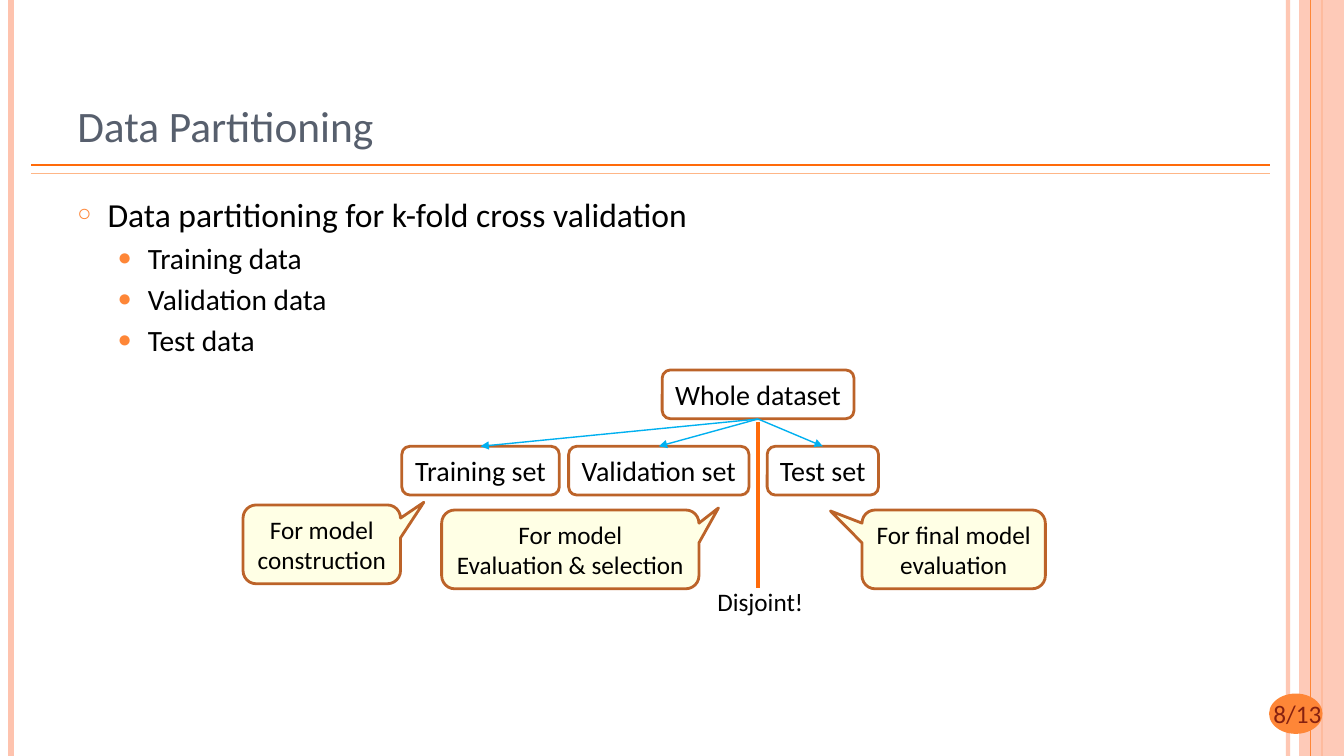
from lxml.etree import SubElement
from pptx import Presentation
from pptx.dml.color import RGBColor
from pptx.enum.shapes import MSO_CONNECTOR, MSO_SHAPE as Shape
from pptx.enum.text import MSO_ANCHOR as Anchor, MSO_AUTO_SIZE as AutoSize, PP_ALIGN as Align
from pptx.oxml.ns import qn
from pptx.util import Pt

FONT = "Calibri"
BLACK = RGBColor(0x00, 0x00, 0x00)
SLATE = RGBColor(0x57, 0x5F, 0x6D)
PEACH = RGBColor(0xFE, 0xC3, 0xAE)
ORANGE = RGBColor(0xFE, 0x86, 0x37)
DEEP_ORANGE = RGBColor(0xFF, 0x6B, 0x0A)
LIGHT_ORANGE = RGBColor(0xFE, 0xB6, 0x87)
BROWN = RGBColor(0xBC, 0x63, 0x29)
MAROON = RGBColor(0x86, 0x21, 0x10)
CREAM = RGBColor(0xFF, 0xFF, 0xCC)
SKY = RGBColor(0x00, 0xB0, 0xF0)

deck = Presentation()
deck.slide_width, deck.slide_height = Pt(960), Pt(540)
slide = deck.slides.add_slide(deck.slide_layouts[1])
shapes = slide.shapes


def add_line(start, end, color, width):
    line = shapes.add_connector(MSO_CONNECTOR.STRAIGHT, *map(Pt, start + end))
    line.line.color.rgb = color
    line.line.width = Pt(width)
    SubElement(line.element.spPr, qn("a:effectLst"))
    return line


def write(shape, text, size, color=BLACK, align=Align.LEFT, **frame_format):
    """Fill a shape with text, one paragraph per line, and format its frame."""
    frame = shape.text_frame
    frame.text = text
    for name, value in frame_format.items():
        setattr(frame, name, value)
    for para in frame.paragraphs:
        para.alignment = align
        for name, value in {"name": FONT, "size": Pt(size)}.items():
            setattr(para.font, name, value)
        para.font.color.rgb = color


# Side stripes and title rules
edge_line = add_line((920, 0), (920, 540), PEACH, 3)
add_line((8, 0), (8, 540), PEACH, 4.5)
add_line((944, 0), (944, 540), ORANGE, 1.5)
side_band = shapes.add_shape(Shape.RECTANGLE, Pt(928), 0, Pt(32), Pt(540))
page_disc = shapes.add_shape(Shape.OVAL, Pt(906.5), Pt(495.4), Pt(38.2), Pt(28.8))
for shape, color in ((side_band, PEACH), (page_disc, ORANGE)):
    shape.shadow.inherit = False
    shape.fill.solid()
    shape.fill.fore_color.rgb = color
    shape.line.fill.background()
add_line((936, 0), (936, 540), ORANGE, 0.75)
add_line((22.5, 118), (907, 118), DEEP_ORANGE, 1)
add_line((22.5, 123.8), (907, 123.8), LIGHT_ORANGE, 1)
for shape, opacity in ((edge_line, 93), (side_band, 87)):
    paint = next(shape.element.spPr.iter(qn("a:srgbClr")))
    SubElement(paint, qn("a:alpha"), val=str(opacity * 1000))

page_number = shapes.add_textbox(Pt(864), Pt(495.4), Pt(87), Pt(28.8))
write(page_number, "8/13", 18, MAROON, Align.RIGHT, word_wrap=True)

# Title and list
title, body = shapes.title, slide.placeholders[1]
for holder, top, height in ((title, 21.6, 90), (body, 134.6, 375)):
    holder.left, holder.top, holder.width, holder.height = map(Pt, (48, top, 784, height))
write(title, "Data Partitioning", 31, SLATE,
      vertical_anchor=Anchor.BOTTOM, auto_size=AutoSize.NONE)

topics = ["Data partitioning for k-fold cross validation",
          "Training data", "Validation data", "Test data"]
write(body, "\n".join(topics), 21, auto_size=AutoSize.NONE)
for index, para in enumerate(body.text_frame.paragraphs):
    level, size, space, indent, bullet, scale = (
        (1, 21, 4.2, 50.4, "●", 80) if index else (0, 24, 6, 21.6, "○", 70))
    para.level = level
    para.font.size = Pt(size)
    para.space_before = Pt(space)
    props = para._p.get_or_add_pPr()
    props.set("marL", str(Pt(indent)))
    props.set("indent", str(Pt(-21.6)))
    SubElement(SubElement(props, qn("a:buClr")), qn("a:srgbClr"), val=str(ORANGE))
    SubElement(props, qn("a:buSzPct"), val=str(scale * 1000))
    SubElement(props, qn("a:buChar"), char=bullet)

# Dataset boxes: text, left, top, width
SET_TOP, BOX_HEIGHT = 318.8, 34.8
DATASETS = [
    ("Whole dataset", 473, 264.3, 137),
    ("Training set", 287, SET_TOP, 112.5),
    ("Validation set", 406.2, SET_TOP, 128.8),
    ("Test set", 548, SET_TOP, 79.5),
]
# Callouts: text, left, top, width, pointer offsets
CALLOUTS = [
    ("For model\nconstruction", 173.6, 360.7, 112.5, (0.648, -0.534)),
    ("For model\nEvaluation & selection", 315.5, 364.3, 183.8, (0.576, -0.527)),
    ("For final model\nevaluation", 615.7, 364.3, 131, (-0.672, -0.487)),
]
centered = {"align": Align.CENTER, "vertical_anchor": Anchor.MIDDLE, "word_wrap": False}
outlined = []
for text, left, top, width in DATASETS:
    box = shapes.add_shape(Shape.ROUNDED_RECTANGLE, *map(Pt, (left, top, width, BOX_HEIGHT)))
    box.fill.background()
    write(box, text, 20, **centered)
    outlined.append(box)
for text, left, top, width, pointer in CALLOUTS:
    callout = shapes.add_shape(Shape.ROUNDED_RECTANGULAR_CALLOUT,
                               *map(Pt, (left, top, width, 56.3)))
    callout.adjustments[0], callout.adjustments[1] = pointer
    callout.fill.solid()
    callout.fill.fore_color.rgb = CREAM
    SubElement(next(callout.element.spPr.iter(qn("a:srgbClr"))), qn("a:alpha"), val="50000")
    write(callout, text, 18, **centered)
    outlined.append(callout)
for shape in outlined:
    shape.shadow.inherit = False
    shape.line.color.rgb = BROWN
    shape.line.width = Pt(2)

# Arrows from the whole dataset to each part
ROOT_X = 541.5
for _, left, top, width in DATASETS[1:]:
    arrow = add_line((ROOT_X, 299.3), (left + width / 2, top), SKY, 1)
    SubElement(arrow.line._get_or_add_ln(), qn("a:tailEnd"), type="triangle")

# Divider
add_line((ROOT_X, 301.5), (ROOT_X, 420), DEEP_ORANGE, 3)
divider_label = shapes.add_textbox(Pt(505.3), Pt(415), Pt(76), Pt(29))
write(divider_label, "Disjoint!", 18, word_wrap=False)

deck.save("out.pptx")
